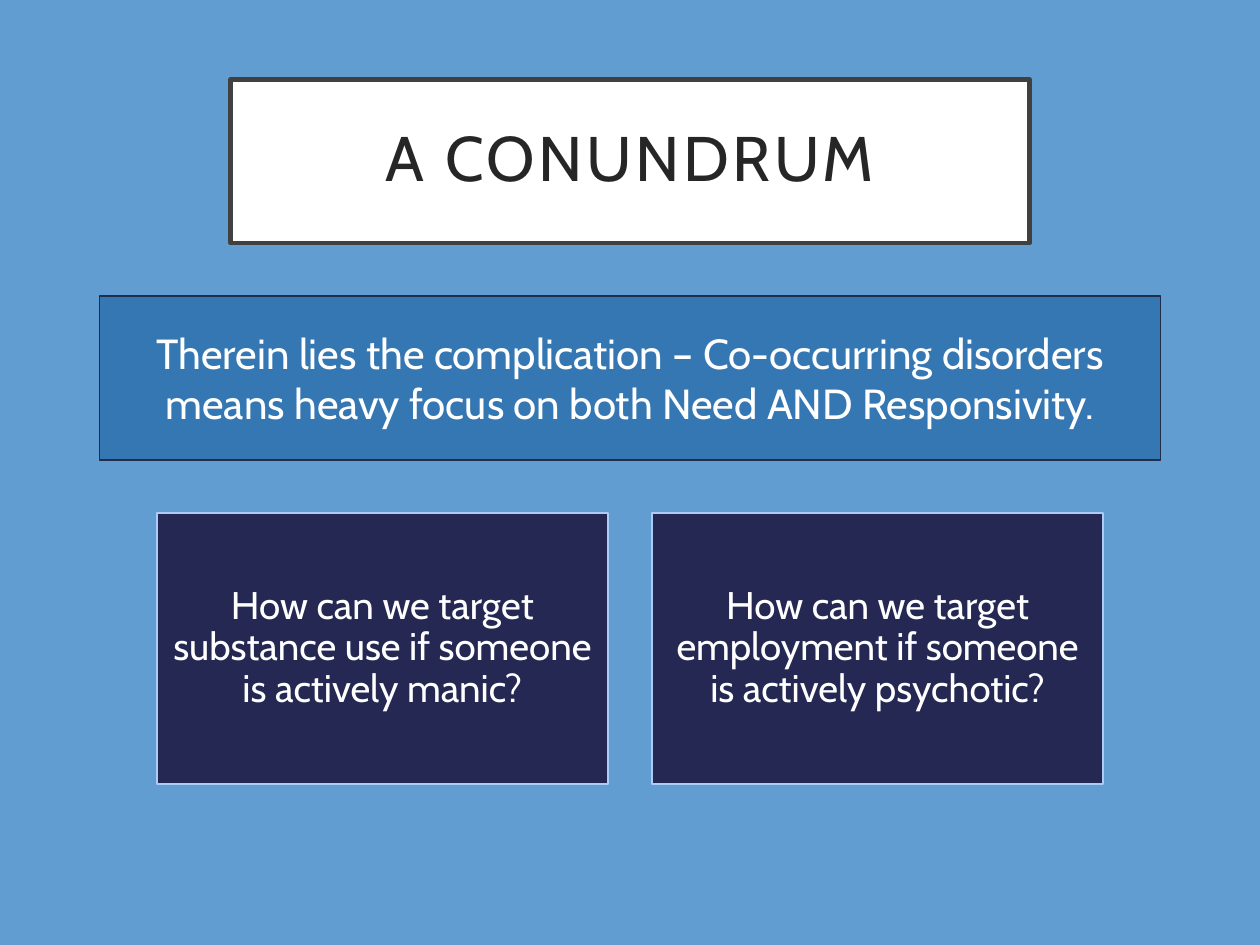
from collections import namedtuple
from dataclasses import dataclass

from pptx import Presentation
from pptx.dml.color import RGBColor
from pptx.enum.shapes import MSO_SHAPE
from pptx.enum.text import MSO_ANCHOR, MSO_AUTO_SIZE, PP_ALIGN
from pptx.util import Inches, Pt

Box = namedtuple("Box", "left top width height")


@dataclass(frozen=True)
class Theme:
    font: str = "Cabin"
    back: str = "629DD1"
    white: str = "FFFFFF"
    ink: str = "262626"
    frame: str = "404040"
    band: str = "3477B2"
    edge: str = "202D4B"
    card: str = "242852"
    rim: str = "ACCBF9"
    head: int = 36
    lead: int = 24
    body: int = 22


THEME = Theme()
WIDTH, HEIGHT = 10, 7.5


def color(code):
    return RGBColor.from_string(code)


def place(shape, box):
    shape.left, shape.top = Inches(box.left), Inches(box.top)
    shape.width, shape.height = Inches(box.width), Inches(box.height)


def paint(shape, fill, line, weight=1):
    shape.fill.solid()
    shape.fill.fore_color.rgb = color(fill)
    shape.line.color.rgb = color(line)
    shape.line.width = Pt(weight)


def write(shape, text, size, ink=THEME.white, inset=0.1, lines=1.0, track=0):
    """Set centred text; inset is in inches, track in points."""
    frame = shape.text_frame
    frame.word_wrap = True
    frame.auto_size = MSO_AUTO_SIZE.NONE
    frame.vertical_anchor = MSO_ANCHOR.MIDDLE
    frame.margin_left = frame.margin_right = Inches(inset)
    frame.margin_top = frame.margin_bottom = Inches(inset)
    para = frame.paragraphs[0]
    para.alignment = PP_ALIGN.CENTER
    para.line_spacing = lines
    run = para.add_run()
    run.text = text
    run.font.name = THEME.font
    run.font.size = Pt(size)
    run.font.color.rgb = color(ink)
    if track:
        run._r.get_or_add_rPr().set("spc", str(track * 100))


def panel(slide, box, fill, line):
    shape = slide.shapes.add_shape(MSO_SHAPE.RECTANGLE, 0, 0, 0, 0)
    shape.shadow.inherit = False
    place(shape, box)
    paint(shape, fill, line)
    return shape


def title(slide, box, text):
    shape = slide.shapes.title
    place(shape, box)
    paint(shape, THEME.white, THEME.frame, 2.5)
    write(shape, text, THEME.head, ink=THEME.ink, inset=0.2, lines=0.9, track=2)


def banner(slide, box, text):
    shape = panel(slide, box, THEME.band, THEME.edge)
    write(shape, text, THEME.lead)


def cards(slide, box, texts, gap=0.35):
    """Share the box among equal cards in one row."""
    width = (box.width - gap * (len(texts) - 1)) / len(texts)
    for col, text in enumerate(texts):
        spot = box._replace(left=box.left + col * (width + gap), width=width)
        shape = panel(slide, spot, THEME.card, THEME.rim)
        write(shape, text, THEME.body, inset=0.09, lines=0.9)


def middle(top, width, height):
    """Give a box centred across the slide."""
    return Box((WIDTH - width) / 2, top, width, height)


def main():
    deck = Presentation()
    deck.slide_width, deck.slide_height = Inches(WIDTH), Inches(HEIGHT)
    slide = deck.slides.add_slide(deck.slide_layouts[5])
    slide.background.fill.solid()
    slide.background.fill.fore_color.rgb = color(THEME.back)

    title(slide, middle(0.63, 6.34, 1.3), "A CONUNDRUM")
    cards(slide, middle(4.07, 7.51, 2.15), [
        "How can we target substance use if someone is actively manic?",
        "How can we target employment if someone is actively psychotic?",
    ])
    banner(slide, middle(2.35, 8.42, 1.3),
           "Therein lies the complication – Co-occurring disorders means "
           "heavy focus on both Need AND Responsivity.")
    deck.save("out.pptx")


if __name__ == "__main__":
    main()
